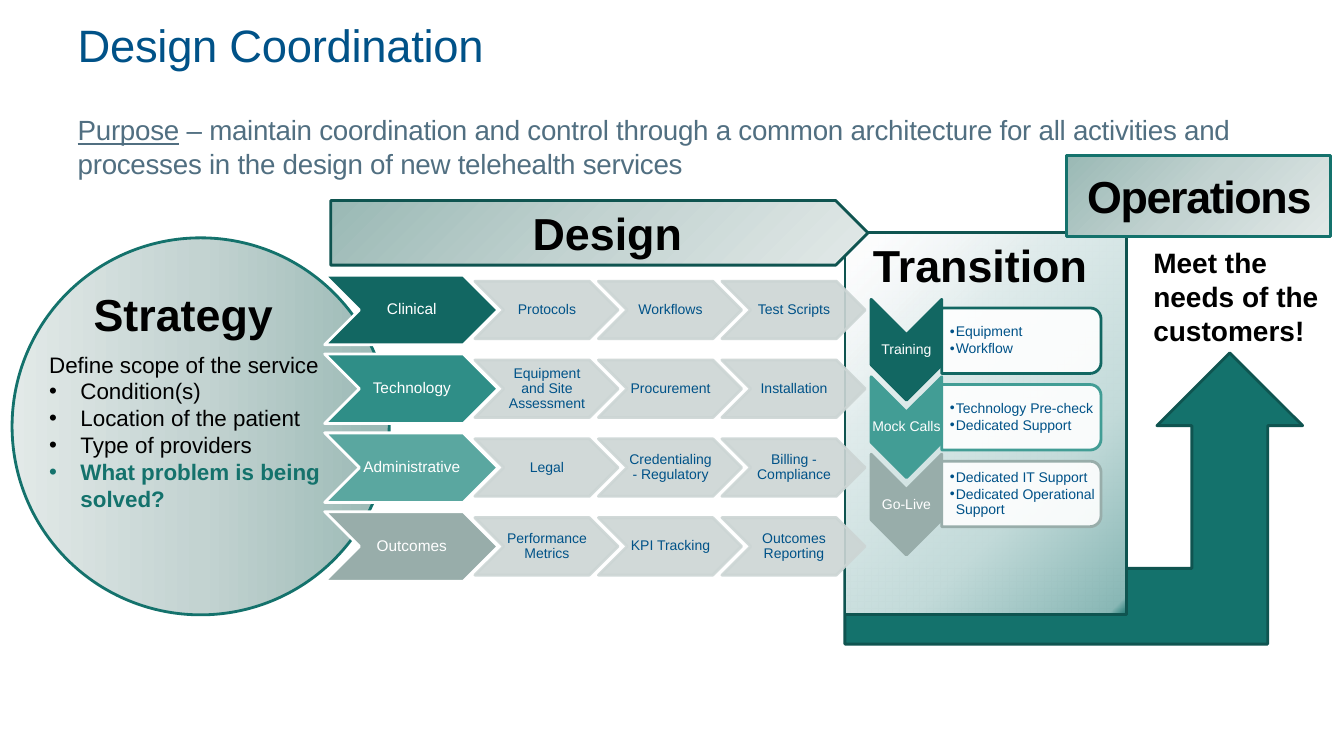
from lxml.etree import SubElement
from pptx import Presentation
from pptx.dml.color import RGBColor
from pptx.enum.shapes import MSO_SHAPE as Kind
from pptx.enum.text import MSO_ANCHOR as Anchor, MSO_AUTO_SIZE as AutoSize, PP_ALIGN as Align
from pptx.oxml.ns import qn
from pptx.util import Inches, Pt

BLACK = RGBColor(0x00, 0x00, 0x00)
WHITE = RGBColor(0xFF, 0xFF, 0xFF)
BLUE = RGBColor(0x00, 0x52, 0x88)
SLATE = RGBColor(0x51, 0x6F, 0x81)
TEAL = RGBColor(0x14, 0x72, 0x6C)
DARK_TEAL = RGBColor(0x0F, 0x54, 0x50)
DEEP = RGBColor(0x12, 0x67, 0x62)
MEDIUM = RGBColor(0x2F, 0x8E, 0x87)
SOFT = RGBColor(0x5A, 0xA7, 0xA0)
SEA = RGBColor(0x42, 0x9D, 0x95)
GRAY = RGBColor(0x98, 0xAD, 0xAA)
PALE = RGBColor(0xCC, 0xD5, 0xD4)

MIST = [(0, "9AB9B5", 100), (50, "C3D3D1", 100), (100, "E2E9E8", 100)]
GLASS = [(0, "14726C", 100), (3, "88B7B5", 100), (32, "C2DAD9", 100),
         (68, "DFEBEB", 100), (96, "FCFCFD", 52)]

TITLE = "Design Coordination"
PURPOSE = ("Purpose", " – maintain coordination and control through a common architecture "
           "for all activities and processes in the design of new telehealth services")
SCOPE = "Define scope of the service"
SCOPE_ITEMS = ["Condition(s)", "Location of the patient", "Type of providers"]
QUESTION = "What problem is being solved?"
DESIGN_ROWS = [
    ("Clinical", DEEP, ["Protocols", "Workflows", "Test Scripts"]),
    ("Technology", MEDIUM, ["Equipment and Site Assessment", "Procurement", "Installation"]),
    ("Administrative", SOFT, ["Legal", "Credentialing - Regulatory", "Billing - Compliance"]),
    ("Outcomes", GRAY, ["Performance Metrics", "KPI Tracking", "Outcomes Reporting"]),
]
TRANSITION_STEPS = [
    ("Training", DEEP, ["Equipment", "Workflow"]),
    ("Mock Calls", SEA, ["Technology Pre-check", "Dedicated Support"]),
    ("Go-Live", GRAY, ["Dedicated IT Support", "Dedicated Operational Support"]),
]
GOAL = "Meet the needs of the customers!"

CELL = Inches(0.1)
DESIGN_LEFT, DESIGN_TOP, DESIGN_ROW = 32.2, 27.3, 7.82
TASK_LEFT, TASK_COLUMN = 47.1, 12.25
STEP_LEFT, STEP_TOP, STEP_ROW = 86.4, 29.7, 7.68
PANEL_LEFT, PANEL_TOP, PANEL_ROW = 93.4, 30.55, 7.6

deck = Presentation()
deck.slide_width, deck.slide_height = Inches(13.33), Inches(7.5)
page = deck.slides.add_slide(deck.slide_layouts[5])


def grid(*cells):
    return [round(cell * CELL) for cell in cells]


def prepare(box, anchor=Anchor.MIDDLE, inset=(1, 0.5, 1, 0.5)):
    frame = box.text_frame
    frame.word_wrap = True
    frame.auto_size = AutoSize.NONE
    frame.vertical_anchor = anchor
    (frame.margin_left, frame.margin_top,
     frame.margin_right, frame.margin_bottom) = grid(*inset)
    return box


def write(box, text, size, color=BLACK, bold=False, underline=False, tracking=0,
          align=Align.LEFT, indent=0, leading=1.0, before=0, after=0, join=False):
    frame = box.text_frame
    para = frame.paragraphs[-1]
    if para.runs and not join:
        para = frame.add_paragraph()
    if not join:
        para.alignment, para.line_spacing = align, leading
        para.space_before, para.space_after = Pt(before), Pt(after)
        if indent:
            properties = para._p.get_or_add_pPr()
            properties.set("marL", str(Inches(indent)))
            properties.set("indent", str(-Inches(indent)))
            SubElement(properties, qn("a:buFont")).set("typeface", "Arial")
            SubElement(properties, qn("a:buChar")).set("char", "•")
    span = para.add_run()
    span.text = text
    span.font.name, span.font.size = "Arial", Pt(size)
    span.font.bold, span.font.underline = bold, underline
    span.font.color.rgb = color
    if tracking:
        span._r.get_or_add_rPr().set("spc", str(round(tracking * 100)))


def text_box(cells, anchor=Anchor.TOP, inset=(1, 0.5, 1, 0.5)):
    return prepare(page.shapes.add_textbox(*grid(*cells)), anchor, inset)


def draw(kind, cells, fill, line, angle=0, turned=False, inset=(0.1, 0.1, 0, 0.1)):
    left, top, width, height = cells
    if turned:
        left, top = left + (width - height) / 2, top + (height - width) / 2
        width, height = height, width
    shape = page.shapes.add_shape(kind, *grid(left, top, width, height))
    shape.rotation = 90 if turned else 0
    shape.shadow.inherit = False
    if isinstance(fill, list):
        shape.fill.gradient()
        shape.fill.gradient_angle = 360 - angle
        stops = next(shape._element.spPr.iter(qn("a:gsLst")))
        for stop in list(stops):
            stops.remove(stop)
        for place, color, opacity in fill:
            stop = SubElement(stops, qn("a:gs"), pos=str(place * 1000))
            tint = SubElement(stop, qn("a:srgbClr"), val=color)
            if opacity < 100:
                SubElement(tint, qn("a:alpha"), val=str(opacity * 1000))
    else:
        shape.fill.solid()
        shape.fill.fore_color.rgb = fill
    shape.line.color.rgb, shape.line.width = line, Pt(2)
    return prepare(shape, inset=inset)


def fade(shape, count):
    for tint in list(shape._element.spPr.iter(qn("a:srgbClr")))[:count]:
        SubElement(tint, qn("a:alpha"), val="90000")


def add_title():
    title = page.shapes.title
    title.left, title.top, title.width, title.height = grid(6.7, 3.5, 120, 12.5)
    prepare(title)
    write(title, TITLE, 32.4, BLUE, tracking=-0.2)
    write(title, PURPOSE[0], 19.8, SLATE, underline=True, tracking=-0.2, before=30)
    write(title, PURPOSE[1], 19.8, SLATE, tracking=-0.2, join=True)


def add_design():
    for row, (name, color, tasks) in enumerate(DESIGN_ROWS):
        top = DESIGN_TOP + row * DESIGN_ROW
        lead = draw(Kind.CHEVRON, (DESIGN_LEFT, top, 17.2, 6.9), color, WHITE)
        write(lead, name, 11, WHITE, align=Align.CENTER, leading=0.9)
        for column, task in enumerate(tasks):
            left = TASK_LEFT + column * TASK_COLUMN
            step = draw(Kind.CHEVRON, (left, top + 0.6, 14.2, 5.7), PALE, PALE)
            fade(step, 2)
            write(step, task, 10, BLUE, align=Align.CENTER, leading=0.9)


def add_strategy():
    write(text_box((8.3, 28, 20.7, 6.4)), "Strategy", 32, bold=True)
    scope = text_box((3.9, 34.3, 29.6, 20.2))
    write(scope, SCOPE, 16)
    for item in SCOPE_ITEMS:
        write(scope, item, 16, indent=0.31)
    write(scope, QUESTION, 16, TEAL, bold=True, indent=0.31)


def add_transition():
    write(text_box((85.6, 23.1, 24.3, 6.4)), "Transition", 32, bold=True)
    for row, (name, color, items) in enumerate(TRANSITION_STEPS):
        top = STEP_TOP + row * STEP_ROW
        draw(Kind.CHEVRON, (STEP_LEFT, top, 7, 10), color, color, turned=True)
        label = text_box((STEP_LEFT, top + 3.5, 7, 3), Anchor.MIDDLE, (0, 0.1, 0, 0.1))
        write(label, name, 10, WHITE, align=Align.CENTER, leading=0.9)
        top = PANEL_TOP + row * PANEL_ROW
        panel = draw(Kind.ROUND_2_SAME_RECTANGLE, (PANEL_LEFT, top, 15.8, 6.5),
                     WHITE, color, turned=True)
        fade(panel, 1)
        notes = text_box((PANEL_LEFT, top + 0.35, 15.5, 5.8), Anchor.MIDDLE,
                         (0.8, 0.1, 0.1, 0.1))
        for item in items:
            write(notes, item, 10, BLUE, indent=0.06, leading=0.9, after=1.5)


def main():
    arrow = draw(Kind.BENT_UP_ARROW, (83.8, 35, 45.4, 28.9), TEAL, DARK_TEAL)
    arrow.adjustments[0] = 0.26
    draw(Kind.RECTANGLE, (83.8, 23.1, 27.9, 37.9), GLASS, DARK_TEAL, angle=225)
    draw(Kind.OVAL, (1.2, 23.6, 37.4, 37.4), MIST, TEAL, angle=180)
    add_title()
    add_design()
    add_strategy()
    banner = draw(Kind.PENTAGON, (32.8, 19.9, 53.3, 6.4), MIST, DARK_TEAL, angle=45,
                  inset=(3.2, 0.5, 0, 0.5))
    write(banner, "Design", 32, bold=True, align=Align.CENTER)
    add_transition()
    write(text_box((113.4, 23.9, 18.6, 11.1)), GOAL, 20, bold=True)
    operations = draw(Kind.RECTANGLE, (105.8, 15.4, 26.2, 8.1), MIST, TEAL, angle=45)
    write(operations, "Operations", 32, bold=True, tracking=-1, align=Align.CENTER)
    deck.save("out.pptx")


if __name__ == "__main__":
    main()
